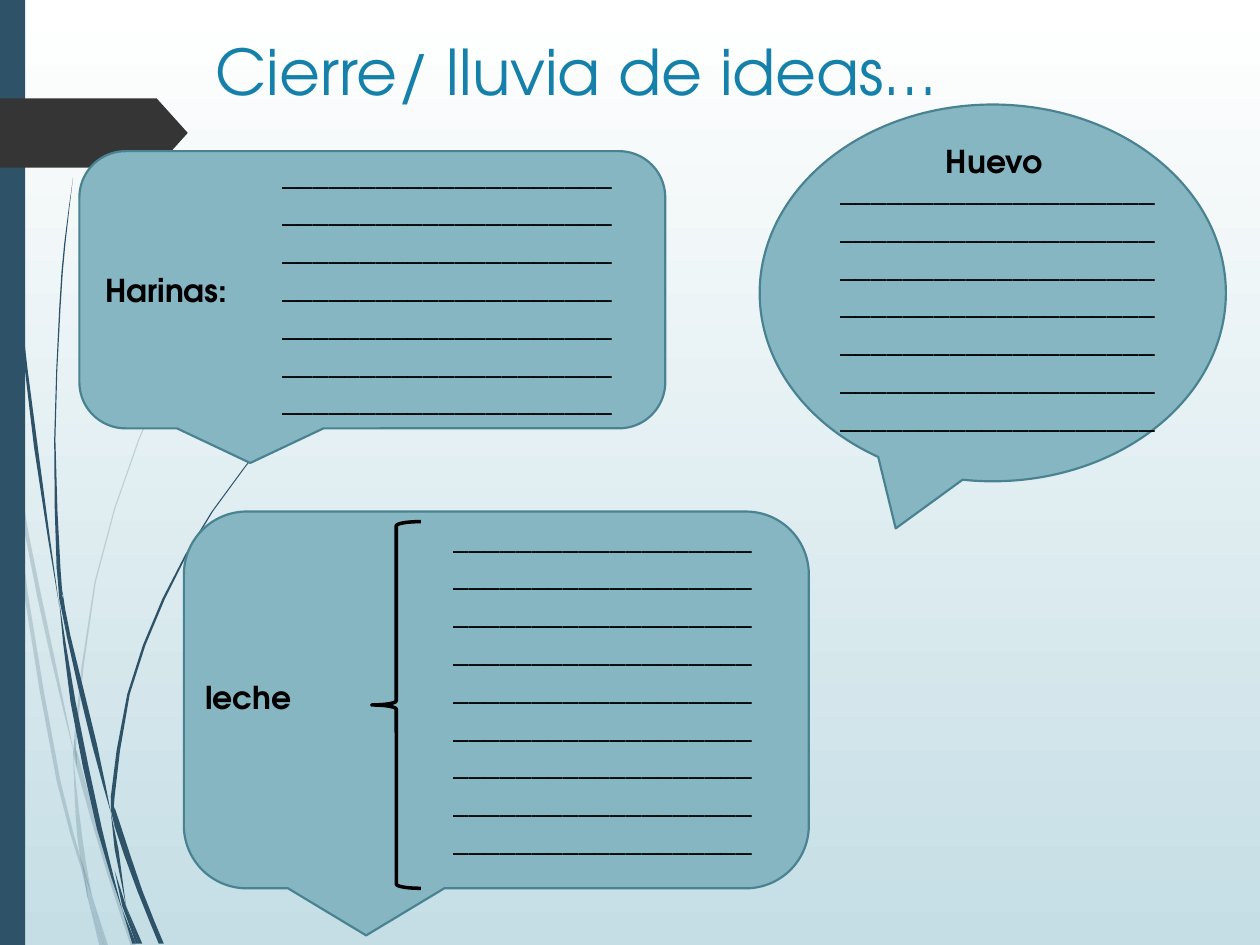
import pptx
import pptx.util
import pptx.dml.color
import pptx.enum.shapes
import pptx.enum.text
import pptx.oxml.ns
from lxml import etree

Inches = pptx.util.Inches
Pt = pptx.util.Pt
SHAPE = pptx.enum.shapes.MSO_SHAPE
ALIGN = pptx.enum.text.PP_ALIGN
ANCHOR = pptx.enum.text.MSO_ANCHOR

FONT = "TeX Gyre Adventor"
COLORS = {
    "sky_top": "FFFFFF", "sky_bottom": "C5DEE5", "navy": "2E5369", "tag": "353535",
    "title": "1581AA", "bubble": "86B6C2", "bubble_line": "498392", "ink": "000000",
}
TITLE = "Cierre/ lluvia de ideas…"

PALE_BLADES = [
    [(0, 0, 2.82), (0, 0.02, 2.99), (0.05, 0.06, 3.22), (0.08, 0.08, 3.5)],
    [(0.1, 0.1, 3.45), (0.2, 0.23, 4.25), (0.4, 0.43, 5.21), (0.59, 0.59, 5.99)],
    [(0.61, 0.61, 5.96), (0.61, 0.65, 6.1), (0.85, 0.88, 6.93), (1.04, 1.08, 7.51)],
    [(0.73, 0.73, 7.11), (0.83, 0.86, 7.51)],
    [(0.08, 0.08, 3.5), (0.19, 0.22, 4.7), (0.45, 0.48, 6.2), (0.64, 0.66, 6.88), (0.7, 0.7, 7.14)],
    [(0.58, 0.58, 5.99), (0.6, 0.63, 6.46), (0.64, 0.68, 6.83), (0.73, 0.73, 7.11)],
    [(2.17, 2.17, 1.53), (1.86, 1.87, 1.98), (1.58, 1.59, 2.45), (1.1, 1.11, 3.48),
     (0.75, 0.76, 4.62), (0.59, 0.61, 5.84), (0.61, 0.61, 5.96)],
    [(0.7, 0.7, 7.14), (0.79, 0.82, 7.51)],
    [(0.59, 0.59, 5.86), (0.58, 0.61, 5.99), (0.61, 0.61, 6.1)],
    [(0.65, 0.65, 6.83), (0.69, 0.73, 7.11), (0.82, 0.83, 7.51)],
]
NAVY_BLADES = [
    [(0.02, 0.03, 0), (0.05, 0.06, 1.1), (0.14, 0.15, 2.33), (0.27, 0.3, 3.55), (0.47, 0.47, 4.81)],
    [(0.5, 0.5, 4.72), (0.53, 0.56, 5.05), (0.73, 0.77, 5.91), (0.88, 0.88, 6.45)],
    [(0.91, 0.91, 6.41), (0.91, 0.96, 6.56), (1.09, 1.13, 7.07), (1.26, 1.3, 7.49)],
    [(0.47, 0.47, 4.77), (0.56, 0.6, 5.57), (0.77, 0.81, 6.58), (0.97, 0.97, 7.22)],
    [(0.58, 0.58, 1.41), (0.51, 0.52, 1.93), (0.47, 0.48, 2.45), (0.43, 0.44, 3.49),
     (0.45, 0.48, 4.51), (0.49, 0.5, 4.72)],
    [(1, 1, 7.19), (1.1, 1.13, 7.49)],
    [(0.45, 0.45, 4.49), (0.47, 0.5, 4.75), (0.53, 0.53, 5.05)],
    [(2.15, 2.16, 3.44), (1.68, 1.69, 4.06), (1.29, 1.31, 4.75), (1.01, 1.03, 5.51),
     (0.88, 0.91, 6.32), (0.91, 0.91, 6.41)],
    [(0.97, 0.97, 7.22), (1.05, 1.08, 7.49)],
    [(0.88, 0.88, 6.45), (0.91, 0.94, 6.74), (1, 1, 7.19)],
    [(0.88, 0.88, 6.31), (0.88, 0.91, 6.43), (0.91, 0.91, 6.56)],
    [(0.91, 0.91, 6.91), (0.97, 1, 7.19), (1.08, 1.1, 7.49)],
]
BUBBLES = [
    (SHAPE.ROUNDED_RECTANGULAR_CALLOUT, (0.63, 1.2, 4.65, 2.2), "Harinas:"),
    (SHAPE.ROUNDED_RECTANGULAR_CALLOUT, (1.46, 4.06, 4.96, 2.99), ""),
    (SHAPE.OVAL_CALLOUT, (6.03, 0.83, 3.7, 2.99), ""),
]
LABELS = [
    ("leche", (1.53, 5.33, 1.81, 0.4), ALIGN.LEFT),
    ("Huevo", (6.04, 1.08, 3.7, 0.4), ALIGN.CENTER),
]
BLANKS = [
    ((2.14, 1.17, 2.88, 2.22), 7, 21),
    ((6.57, 1.3, 2.72, 2.22), 7, 20),
    ((3.5, 4.06, 2.68, 2.83), 9, 19),
]
BRACE = (2.95, 4.14, 0.39, 2.91)


def rgb(name):
    return pptx.dml.color.RGBColor.from_string(COLORS[name])


def box(place):
    return [Inches(v) for v in place]


def paint(sp, fill=None, line=None, width=1.25):
    sp.shadow.inherit = False
    if fill:
        sp.fill.solid()
        sp.fill.fore_color.rgb = rgb(fill)
    else:
        sp.fill.background()
    if line:
        sp.line.color.rgb = rgb(line)
        sp.line.width = Pt(width)
    else:
        sp.line.fill.background()
    return sp


def write(tf, text, size=18, color="ink", bold=False, align=ALIGN.LEFT):
    tf.word_wrap = True
    p = tf.paragraphs[0]
    p.text = text
    p.alignment = align
    p.font.name = FONT
    p.font.size = Pt(size)
    p.font.bold = bold
    p.font.color.rgb = rgb(color)


def smooth(rows):
    padded = [rows[0], *rows, rows[-1]]
    for a, b, c, d in zip(padded, padded[1:], padded[2:], padded[3:]):
        yield b
        if len(rows) > 3:
            yield tuple((9 * (q + r) - p - s) / 16 for p, q, r, s in zip(a, b, c, d))
    yield rows[-1]


def add_blade(s, rows, alpha=None):
    curve = list(smooth(rows))
    edge = [(l, y) for l, r, y in curve] + [(r, y) for l, r, y in reversed(curve) if r > l]
    points = [(Inches(x), Inches(y)) for x, y in edge]
    builder = s.shapes.build_freeform(*points[0])
    builder.add_line_segments(points[1:], close=True)
    sp = paint(builder.convert_to_shape(), "navy")
    if alpha:
        qn = pptx.oxml.ns.qn
        clr = sp._element.spPr.find(qn("a:solidFill")).find(qn("a:srgbClr"))
        etree.SubElement(clr, qn("a:alpha"), val=str(alpha * 1000))


def add_label(s, place, text, **style):
    write(s.shapes.add_textbox(*box(place)).text_frame, text, **style)


def main():
    prs = pptx.Presentation()
    prs.slide_width, prs.slide_height = Inches(10), Inches(7.5)
    s = prs.slides.add_slide(prs.slide_layouts[5])

    sky = s.background.fill
    sky.gradient()
    sky.gradient_angle = 270
    for stop, name in zip(sky.gradient_stops, ("sky_top", "sky_bottom")):
        stop.color.rgb = rgb(name)

    for rows in PALE_BLADES:
        add_blade(s, rows, alpha=20)
    for rows in NAVY_BLADES:
        add_blade(s, rows)

    paint(s.shapes.add_shape(SHAPE.RECTANGLE, *box((0, 0, 0.2, 7.5))), "navy")
    tag = paint(s.shapes.add_shape(SHAPE.PENTAGON, *box((0, 0.78, 1.49, 0.55))), "tag")
    tag.adjustments[0] = 0.45

    title = s.shapes.title
    title.left, title.top, title.width, title.height = box((1.61, 0.21, 8.2, 1.25))
    title.text_frame.vertical_anchor = ANCHOR.TOP
    write(title.text_frame, TITLE, size=36, color="title")

    for kind, place, text in BUBBLES:
        sp = paint(s.shapes.add_shape(kind, *box(place)), "bubble", "bubble_line")
        if text:
            sp.text_frame.vertical_anchor = ANCHOR.MIDDLE
            write(sp.text_frame, text, bold=True)

    paint(s.shapes.add_shape(SHAPE.LEFT_BRACE, *box(BRACE)), line="ink", width=2)
    for text, place, align in LABELS:
        add_label(s, place, text, bold=True, align=align)
    for place, lines, per_line in BLANKS:
        add_label(s, place, "_" * (lines * per_line))

    prs.save("out.pptx")


if __name__ == "__main__":
    main()
